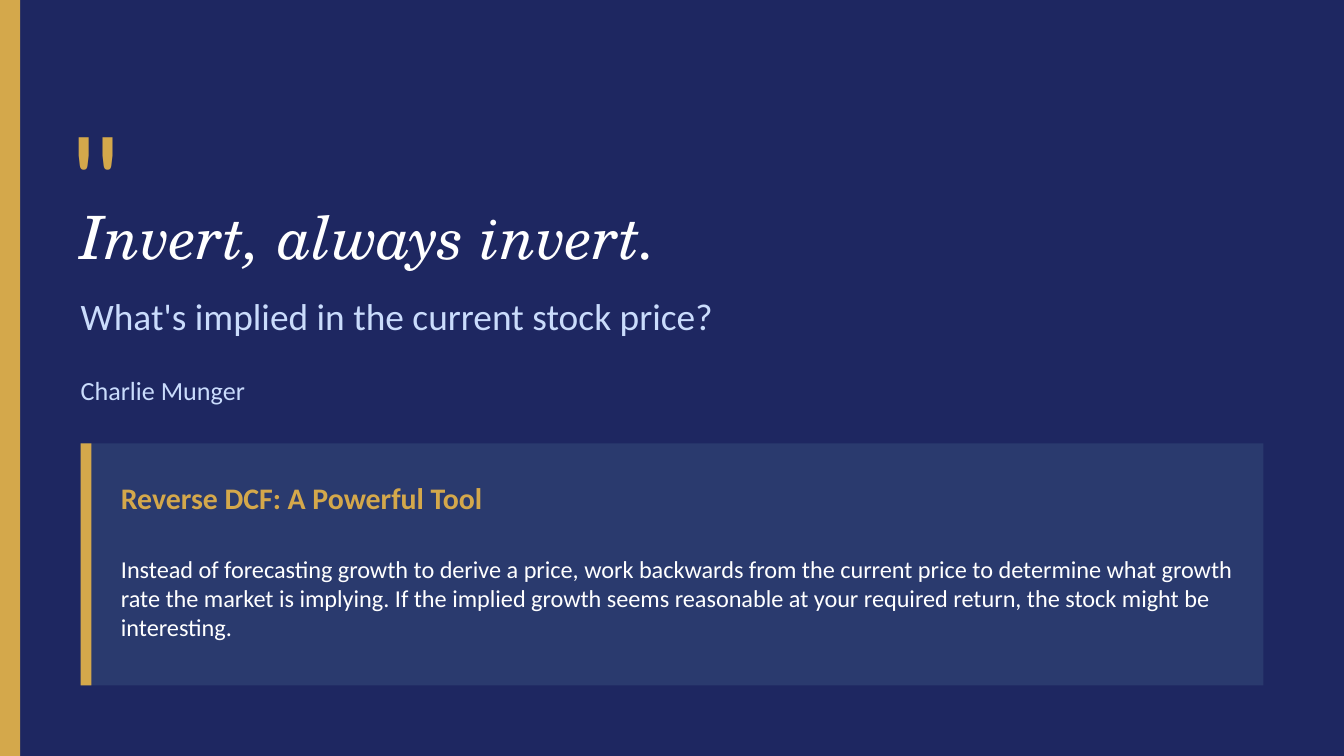
from pptx import Presentation
from pptx.dml.color import RGBColor
from pptx.enum.shapes import MSO_SHAPE
from pptx.enum.text import MSO_ANCHOR
from pptx.util import Inches, Pt

NAVY = RGBColor(0x1E, 0x27, 0x61)
PANEL = RGBColor(0x2A, 0x3A, 0x6E)
GOLD = RGBColor(0xD4, 0xA8, 0x4B)
ICE = RGBColor(0xCA, 0xDC, 0xFC)
WHITE = RGBColor(0xFF, 0xFF, 0xFF)

SLIDE_WIDTH = 10
SLIDE_HEIGHT = SLIDE_WIDTH * 9 / 16


def add_bar(slide, left, top, width, height, color):
    shape = slide.shapes.add_shape(
        MSO_SHAPE.RECTANGLE, Inches(left), Inches(top), Inches(width), Inches(height))
    shape.shadow.inherit = False
    shape.fill.solid()
    shape.fill.fore_color.rgb = color
    shape.line.fill.background()


def add_text(slide, left, top, width, height, text, color, size, **font_format):
    box = slide.shapes.add_textbox(
        Inches(left), Inches(top), Inches(width), Inches(height))
    frame = box.text_frame
    frame_format = {"word_wrap": True, "vertical_anchor": MSO_ANCHOR.MIDDLE,
                    "margin_left": 0, "margin_top": 0,
                    "margin_right": 0, "margin_bottom": 0}
    for name, value in frame_format.items():
        setattr(frame, name, value)
    run = frame.paragraphs[0].add_run()
    run.text = text
    run.font.color.rgb = color
    for name, value in {"name": "Calibri", "size": Pt(size), **font_format}.items():
        setattr(run.font, name, value)


def add_quote(slide, left, top, width):
    add_text(slide, left - 0.1, top, 1, 1, '"', GOLD, 72)
    add_text(slide, left, top + 0.6, width, 0.7, "Invert, always invert.",
             WHITE, 32, name="TeX Gyre Schola", italic=True)
    add_text(slide, left, top + 1.3, width, 0.5,
             "What's implied in the current stock price?", ICE, 20)
    add_text(slide, left, top + 1.9, width, 0.4, "Charlie Munger", ICE, 14)


def add_callout(slide, left, top, width, height):
    add_bar(slide, left, top, width, height, PANEL)
    add_bar(slide, left, top, 0.08, height, GOLD)
    text_left, text_width = left + 0.3, width - 0.5
    add_text(slide, text_left, top + 0.2, text_width, 0.4,
             "Reverse DCF: A Powerful Tool", GOLD, 16, bold=True)
    add_text(slide, text_left, top + 0.65, text_width, 1,
             "Instead of forecasting growth to derive a price, work backwards from "
             "the current price to determine what growth rate the market is implying. "
             "If the implied growth seems reasonable at your required return, "
             "the stock might be interesting.", WHITE, 13)


def main():
    presentation = Presentation()
    presentation.slide_width = Inches(SLIDE_WIDTH)
    presentation.slide_height = Inches(SLIDE_HEIGHT)
    slide = presentation.slides.add_slide(presentation.slide_layouts[6])
    slide.background.fill.solid()
    slide.background.fill.fore_color.rgb = NAVY
    add_bar(slide, 0, 0, 0.15, SLIDE_HEIGHT, GOLD)
    add_quote(slide, 0.6, 0.8, 8.5)
    add_callout(slide, 0.6, 3.3, 8.8, 1.8)
    presentation.save("out.pptx")


if __name__ == "__main__":
    main()
